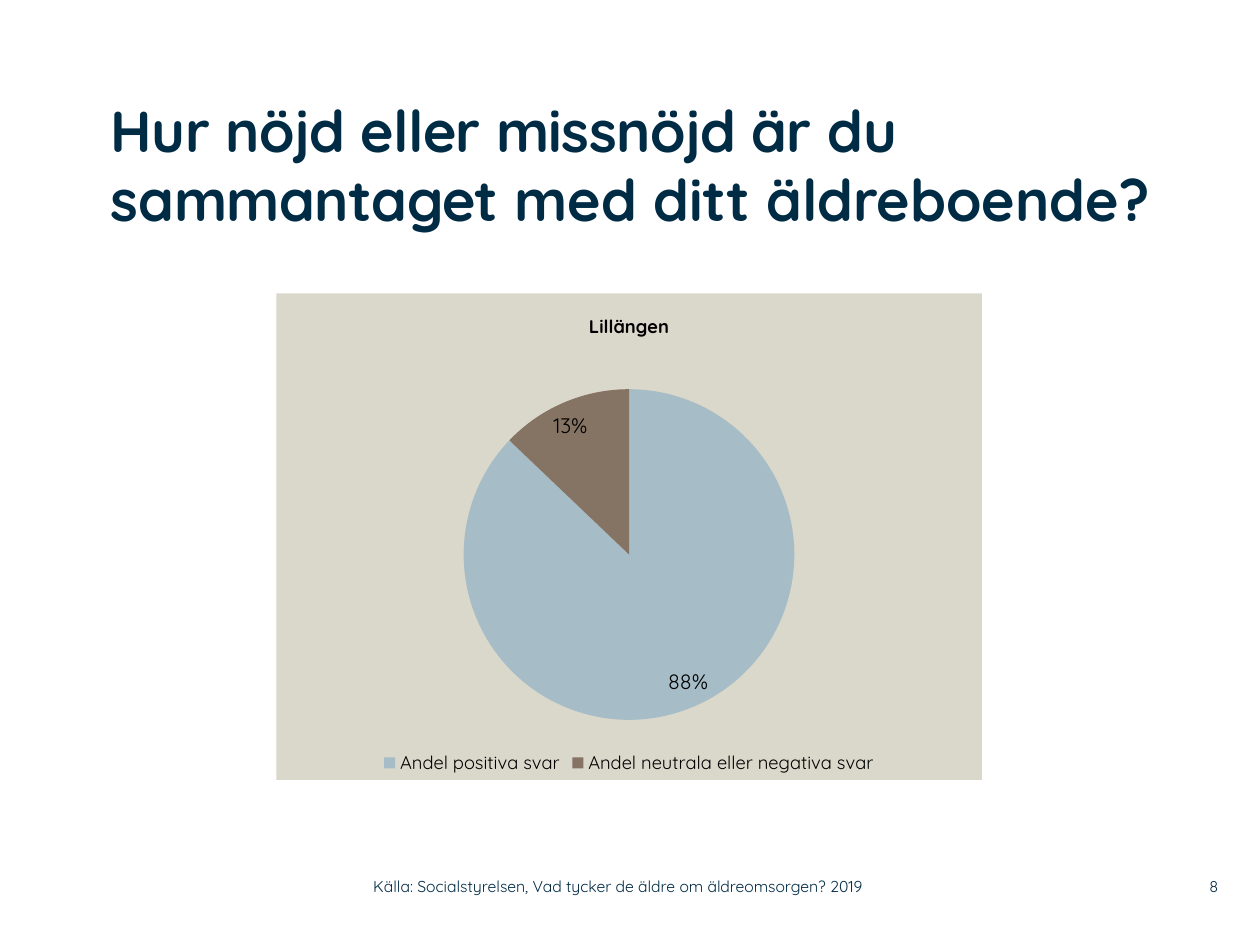
from lxml import etree
from pptx import Presentation
from pptx import util as u
from pptx.chart.data import CategoryChartData
from pptx.dml.color import RGBColor
from pptx.enum import chart as charts, text
from pptx.oxml.ns import qn

NAVY = RGBColor(0x00, 0x2B, 0x45)
BLACK = RGBColor(0x00, 0x00, 0x00)
SAND = RGBColor(0xDA, 0xD7, 0xCB)
BLUE = RGBColor(0xA6, 0xBC, 0xC6)
BROWN = RGBColor(0x85, 0x73, 0x63)
FONT = "Quicksand"


def set_font(font, size, color, bold=False):
    font.name = FONT
    font.size = u.Pt(size)
    font.color.rgb = color
    font.bold = bold


def set_frame(frame, anchor):
    frame.margin_left = frame.margin_top = frame.margin_right = frame.margin_bottom = 0
    frame.word_wrap = True
    frame.auto_size = text.MSO_AUTO_SIZE.NONE
    frame.vertical_anchor = anchor


deck = Presentation()
deck.slide_width, deck.slide_height = u.Pt(720), u.Pt(540)
page = deck.slides.add_slide(deck.slide_layouts[5])

# Title
title = page.shapes.title
title.left, title.top, title.width, title.height = u.Pt(63.4), u.Pt(54), u.Pt(635.8), u.Pt(102.2)
set_frame(title.text_frame, text.MSO_ANCHOR.TOP)
para = title.text_frame.paragraphs[0]
para.alignment = text.PP_ALIGN.LEFT
para.line_spacing = 1.0
for words, spacing in (("Hur nöjd eller missnöjd är du sammantaget ", -30),
                       ("med ditt äldreboende?", 0)):
    span = para.add_run()
    span.text = words
    set_font(span.font, 33, NAVY, True)
    span.font._element.set("spc", str(spacing))

# Pie chart
data = CategoryChartData()
data.categories = ["Andel positiva svar", "Andel neutrala eller negativa svar"]
data.add_series("Series 1", (88, 13))
chart = page.shapes.add_chart(charts.XL_CHART_TYPE.PIE, u.Pt(157.9), u.Pt(167.7),
                              u.Pt(403.2), u.Pt(277.9), data).chart
set_font(chart.font, 18, BLACK)
chart.has_title = True
chart.chart_title.text_frame.text = "Lillängen"
set_font(chart.chart_title.text_frame.paragraphs[0].runs[0].font, 10.5, BLACK, True)
chart.has_legend = True
chart.legend.position = charts.XL_LEGEND_POSITION.BOTTOM
chart.legend.include_in_layout = False
set_font(chart.legend.font, 10.5, BLACK)

plot = chart.plots[0]
plot.vary_by_categories = True
for index, color in enumerate((BLUE, BROWN)):
    fill = plot.series[0].points[index].format.fill
    fill.solid()
    fill.fore_color.rgb = color

# The rounded shares add up to 101, so the labels show the values themselves
plot.has_data_labels = True
labels = plot.data_labels
labels.show_value = True
labels.number_format = '0"%"'
labels.number_format_is_linked = False
labels.position = charts.XL_LABEL_POSITION.BEST_FIT
set_font(labels.font, 12, BLACK)

# Plot area placement, as shares of the chart
area = chart._chartSpace.chart.plotArea
for old in area.findall(qn("c:layout")):
    area.remove(old)
layout = etree.Element(qn("c:layout"))
area.insert(0, layout)
manual = etree.SubElement(layout, qn("c:manualLayout"))
for tag, value in (("layoutTarget", "inner"), ("xMode", "edge"), ("yMode", "edge"),
                   ("x", "0.265"), ("y", "0.197"), ("w", "0.47"), ("h", "0.68")):
    etree.SubElement(manual, qn("c:" + tag)).set("val", value)

# Chart background
background = etree.Element(qn("c:spPr"))
solid = etree.SubElement(background, qn("a:solidFill"))
etree.SubElement(solid, qn("a:srgbClr")).set("val", str(SAND))
etree.SubElement(etree.SubElement(background, qn("a:ln")), qn("a:noFill"))
chart._chartSpace.chart.addnext(background)

# Source line and page number
for words, left, width, alignment in (
        ("Källa: Socialstyrelsen, Vad tycker de äldre om äldreomsorgen? 2019",
         213.3, 319, text.PP_ALIGN.LEFT),
        ("8", 662.4, 33.8, text.PP_ALIGN.RIGHT)):
    box = page.shapes.add_textbox(u.Pt(left), u.Pt(496.1), u.Pt(width), u.Pt(20.9))
    set_frame(box.text_frame, text.MSO_ANCHOR.MIDDLE)
    box.text_frame.text = words
    para = box.text_frame.paragraphs[0]
    para.alignment = alignment
    set_font(para.runs[0].font, 9, NAVY)

deck.save("out.pptx")
